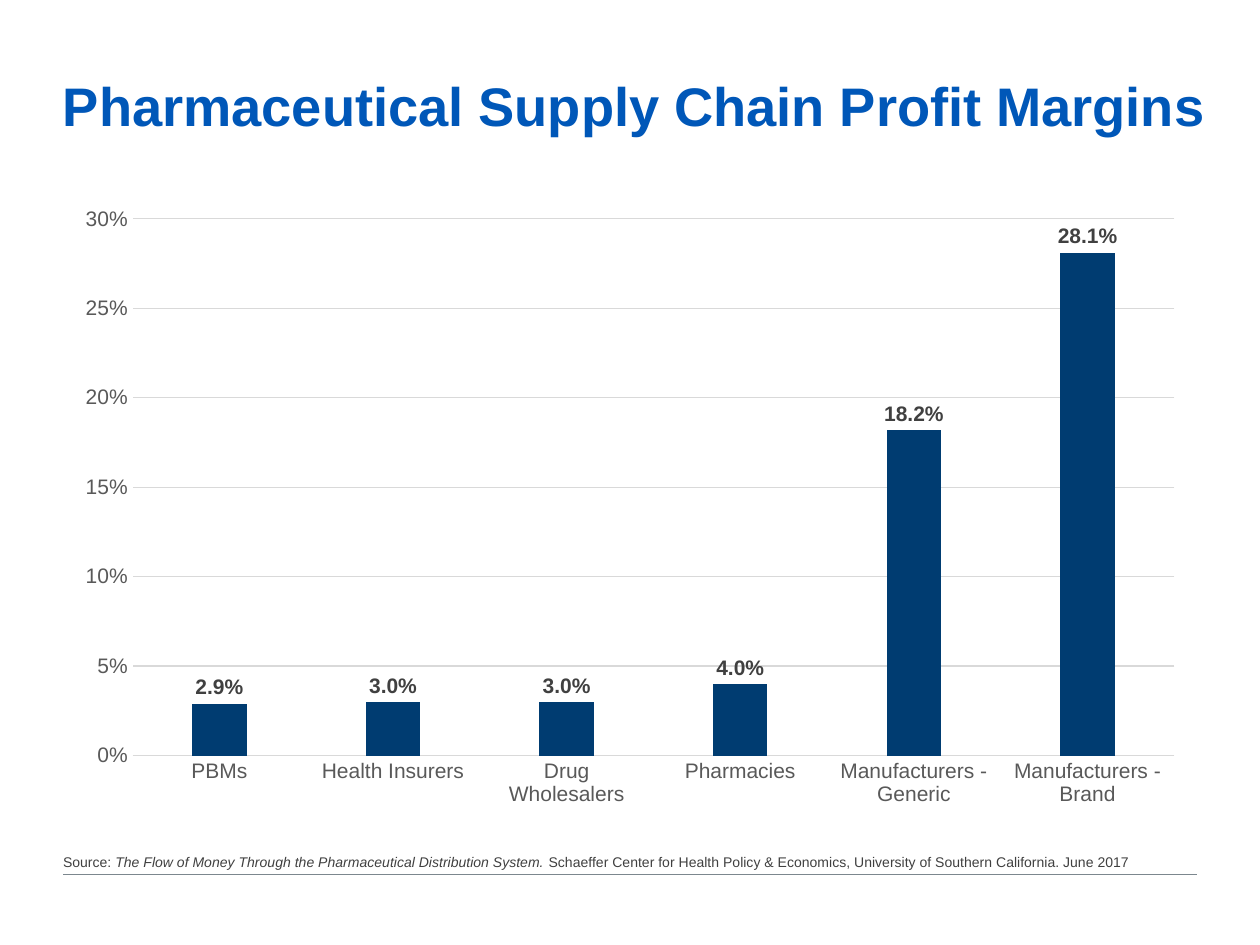
"""Builds a slide with a column chart of pharmaceutical supply chain profit margins."""
from lxml import etree
from pptx import Presentation
from pptx.chart.data import CategoryChartData
from pptx.dml.color import RGBColor
from pptx.enum.chart import XL_CHART_TYPE, XL_LABEL_POSITION, XL_TICK_MARK
from pptx.enum.shapes import MSO_CONNECTOR
from pptx.enum.text import MSO_ANCHOR
from pptx.oxml.ns import qn
from pptx.util import Inches, Pt

COLUMNS = XL_CHART_TYPE.COLUMN_CLUSTERED
OUTSIDE_END = XL_LABEL_POSITION.OUTSIDE_END
NO_TICK = XL_TICK_MARK.NONE
STRAIGHT = MSO_CONNECTOR.STRAIGHT
TOP, BOTTOM = MSO_ANCHOR.TOP, MSO_ANCHOR.BOTTOM

COLORS = {
    "title": "0057B8",
    "bar": "003C71",
    "text": "404040",
    "axis": "595959",
    "grid": "D9D9D9",
    "rule": "7C878E",
}
MARGINS = {
    "PBMs": 0.029,
    "Health Insurers": 0.03,
    "Drug Wholesalers": 0.03,
    "Pharmacies": 0.04,
    "Manufacturers - Generic": 0.182,
    "Manufacturers - Brand": 0.281,
}


def style_font(font, size, color, **formats):
    font.color.rgb = RGBColor.from_string(COLORS[color])
    for name, value in {"name": "Arial", "size": Pt(size), **formats}.items():
        setattr(font, name, value)


def add_text(slide, box, anchor, inset, size, color, runs):
    frame = slide.shapes.add_textbox(*map(Inches, box)).text_frame
    formats = {
        "word_wrap": True,
        "vertical_anchor": anchor,
        "margin_left": 0,
        "margin_right": 0,
        "margin_top": Inches(inset),
        "margin_bottom": Inches(inset),
    }
    for name, value in formats.items():
        setattr(frame, name, value)
    for text, font_formats in runs:
        run = frame.paragraphs[0].add_run()
        run.text = text
        style_font(run.font, size, color, **font_formats)


prs = Presentation()
prs.slide_width, prs.slide_height = Inches(10), Inches(7.5)
slide = prs.slides.add_slide(prs.slide_layouts[6])

footer_rule = slide.shapes.add_connector(
    STRAIGHT, Inches(0.5), Inches(6.94), Inches(9.5), Inches(6.94))
footer_rule.line.color.rgb = RGBColor.from_string(COLORS["rule"])
footer_rule.line.width = Pt(1)
etree.SubElement(footer_rule._element.spPr, qn("a:effectLst"))

add_text(slide, (0.5, 0.57, 9.26, 0.98), TOP, 0, 31, "title",
         [("Pharmaceutical Supply Chain Profit Margins", {"bold": True})])

margin_data = CategoryChartData(number_format="0.0%")
margin_data.categories = list(MARGINS)
margin_data.add_series("Series 1", list(MARGINS.values()))
chart = slide.shapes.add_chart(
    COLUMNS, Inches(0.5), Inches(1.55), Inches(9), Inches(4.94), margin_data).chart
chart.has_title = False
chart.has_legend = False
style_font(chart.font, 10, "axis")

sectors, percent = chart.category_axis, chart.value_axis
for axis in (sectors, percent):
    axis.major_tick_mark = axis.minor_tick_mark = NO_TICK
    style_font(axis.tick_labels.font, 12, "axis")
percent.minimum_scale, percent.maximum_scale, percent.major_unit = 0, 0.3, 0.05
percent.tick_labels.number_format = "0%"
percent.tick_labels.number_format_is_linked = False
percent.format.line.fill.background()
for line in (sectors.format.line, percent.major_gridlines.format.line):
    line.color.rgb = RGBColor.from_string(COLORS["grid"])
    line.width = Pt(0.75)

bars = chart.plots[0]
bars.vary_by_categories = False
bars.gap_width, bars.overlap = 219, -27
bar_fill = bars.series[0].format.fill
bar_fill.solid()
bar_fill.fore_color.rgb = RGBColor.from_string(COLORS["bar"])

bars.has_data_labels = True
label_formats = {
    "show_value": True,
    "position": OUTSIDE_END,
    "number_format": "0.0%",
    "number_format_is_linked": False,
}
for name, value in label_formats.items():
    setattr(bars.data_labels, name, value)
style_font(bars.data_labels.font, 12, "text", bold=True)

add_text(slide, (0.5, 6.71, 9.42, 0.25), BOTTOM, 0.05, 8, "text", [
    ("Source: ", {}),
    ("The Flow of Money Through the Pharmaceutical Distribution System. ", {"italic": True}),
    ("Schaeffer Center for Health Policy & Economics, "
     "University of Southern California. June 2017", {}),
])

prs.save("out.pptx")
